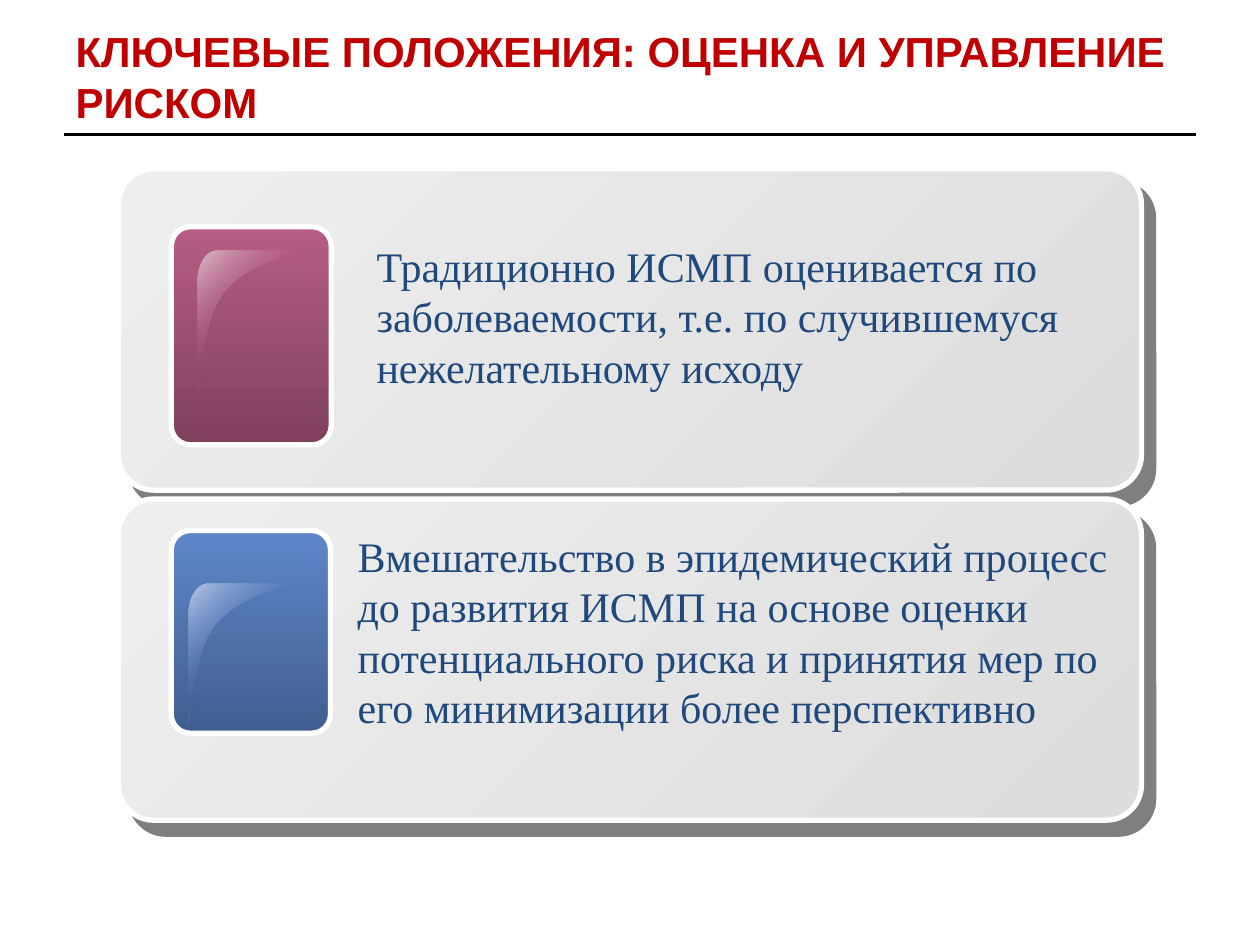
from lxml import etree
from pptx import Presentation
from pptx import util as u
from pptx.dml.color import RGBColor
from pptx.enum import shapes, text
from pptx.oxml import ns

TITLE_RED = RGBColor(0xC0, 0x00, 0x00)
TEXT_NAVY = RGBColor(0x1F, 0x49, 0x7D)
WHITE = RGBColor(0xFF, 0xFF, 0xFF)
BLACK = RGBColor(0x00, 0x00, 0x00)
PANEL_LIGHT = RGBColor(0xEE, 0xEE, 0xEE)
PANEL_DARK = RGBColor(0xDD, 0xDD, 0xDD)
PLUM = RGBColor(0xB7, 0x5D, 0x86)
PLUM_DARK = RGBColor(0x7F, 0x40, 0x5D)
PLUM_GLOSS = RGBColor(0xDC, 0xBE, 0xC9)
BLUE = RGBColor(0x5E, 0x87, 0xCA)
BLUE_DARK = RGBColor(0x42, 0x5E, 0x8F)
BLUE_GLOSS = RGBColor(0xBE, 0xC9, 0xE4)

GLOSS_START = (10.8, 0)
GLOSS_CURVES = [
    [GLOSS_START, (5, 0), (0, 7.9), (0, 16.6)],
    [(0, 81.4), (2.9, 82.1), (1.4, 42.5), (15.1, 24.5)],
    [(15.1, 24.5), (29.5, 5.8), (56.2, 4.3), (55.4, 0)],
]
CURVE_STEPS = 12


def add_color(parent, color, alpha=100):
    node = etree.SubElement(parent, ns.qn("a:srgbClr"), val=str(color))
    if alpha < 100:
        etree.SubElement(node, ns.qn("a:alpha"), val=str(alpha * 1000))


def set_gradient(shape, stops, angle):
    shape.fill.gradient()
    gradient = shape.fill._xPr.find(ns.qn("a:gradFill"))
    for child in list(gradient):
        gradient.remove(child)
    stop_list = etree.SubElement(gradient, ns.qn("a:gsLst"))
    for position, color, alpha in stops:
        stop = etree.SubElement(stop_list, ns.qn("a:gs"), pos=str(position * 1000))
        add_color(stop, color, alpha)
    etree.SubElement(gradient, ns.qn("a:lin"), ang=str(angle * 60000), scaled="0")


def add_card(slide, left, top, width, height, rounding, colors, angle):
    card = slide.shapes.add_shape(
        shapes.MSO_SHAPE.ROUNDED_RECTANGLE,
        u.Pt(left), u.Pt(top), u.Pt(width), u.Pt(height))
    card.adjustments[0] = rounding
    card.shadow.inherit = False
    set_gradient(card, [(0, colors[0], 100), (100, colors[1], 100)], angle)
    card.line.color.rgb = WHITE
    card.line.width = u.Pt(3)
    return card


def add_panel(slide, top):
    panel = add_card(slide, 67.7, top, 584.6, 183.6, 0.11,
                     (PANEL_LIGHT, PANEL_DARK), 45)
    effects = panel._element.spPr.find(ns.qn("a:effectLst"))
    shadow = etree.SubElement(
        effects, ns.qn("a:outerShdw"), blurRad="0", dist=str(u.Pt(10.6)),
        dir=str(49 * 60000), algn="ctr", rotWithShape="0")
    add_color(shadow, BLACK, 50)


def bezier_point(curve, t):
    weights = ((1 - t) ** 3, 3 * t * (1 - t) ** 2, 3 * t ** 2 * (1 - t), t ** 3)
    return tuple(sum(w * p[axis] for w, p in zip(weights, curve)) for axis in (0, 1))


def add_gloss(slide, left, top, base, gloss):
    def place(point):
        return u.Pt(left + point[0]), u.Pt(top + point[1])

    outline = [place(bezier_point(curve, step / CURVE_STEPS))
               for curve in GLOSS_CURVES for step in range(CURVE_STEPS + 1)]
    builder = slide.shapes.build_freeform(*place(GLOSS_START))
    builder.add_line_segments(outline[1:], close=True)
    highlight = builder.convert_to_shape()
    highlight.shadow.inherit = False
    highlight.line.fill.background()
    set_gradient(highlight, [(0, gloss, 100), (50, base, 0), (100, gloss, 100)], 45)


def style_text(paragraph, font_name, color, bold):
    paragraph.alignment = text.PP_ALIGN.LEFT
    for run in paragraph.runs:
        run.font.name = font_name
        run.font.size = u.Pt(24)
        run.font.bold = bold
        run.font.color.rgb = color


def add_statement(slide, left, top, width, height, wording):
    statement = slide.shapes.add_textbox(
        u.Pt(left), u.Pt(top), u.Pt(width), u.Pt(height))
    frame = statement.text_frame
    frame.word_wrap = True
    frame.auto_size = text.MSO_AUTO_SIZE.SHAPE_TO_FIT_TEXT
    frame.paragraphs[0].text = wording
    style_text(frame.paragraphs[0], "Times New Roman", TEXT_NAVY, False)


def add_heading(slide, wording):
    heading = slide.shapes.title
    heading.left, heading.top = u.Pt(36), u.Pt(21.6)
    heading.width, heading.height = u.Pt(648), u.Pt(43.9)
    frame = heading.text_frame
    frame.text = wording
    frame.word_wrap = True
    frame.auto_size = text.MSO_AUTO_SIZE.NONE
    frame.vertical_anchor = text.MSO_ANCHOR.MIDDLE
    style_text(frame.paragraphs[0], "Arial", TITLE_RED, True)


def add_rule(slide):
    rule = slide.shapes.add_connector(
        shapes.MSO_CONNECTOR.STRAIGHT,
        u.Pt(36.7), u.Pt(77), u.Pt(683.3), u.Pt(77))
    rule.line.color.rgb = BLACK
    rule.line.width = u.Pt(1.5)
    etree.SubElement(rule._element.spPr, ns.qn("a:effectLst"))


def main():
    deck = Presentation()
    deck.slide_width, deck.slide_height = u.Pt(720), u.Pt(540)
    slide = deck.slides.add_slide(deck.slide_layouts[5])

    add_rule(slide)
    add_heading(slide, "КЛЮЧЕВЫЕ ПОЛОЖЕНИЯ: ОЦЕНКА И УПРАВЛЕНИЕ РИСКОМ")

    add_panel(slide, 96.5)
    add_statement(slide, 208.1, 133.9, 475.2, 94.3,
                  "Традиционно ИСМП оценивается по заболеваемости, "
                  "т.е. по случившемуся\vнежелательному исходу")
    add_card(slide, 97.9, 129.6, 91.4, 124.6, 0.12, (PLUM, PLUM_DARK), 90)
    add_gloss(slide, 113, 143.3, PLUM, PLUM_GLOSS)

    add_panel(slide, 285.1)
    add_card(slide, 97.9, 303.1, 91, 115.9, 0.12, (BLUE, BLUE_DARK), 90)
    add_gloss(slide, 108, 333.4, BLUE, BLUE_GLOSS)
    add_statement(slide, 197.3, 299.5, 450.7, 123.8,
                  "Вмешательство в эпидемический процесс до развития ИСМП "
                  "на основе оценки потенциального риска и принятия мер "
                  "по его минимизации более перспективно")

    deck.save("out.pptx")


if __name__ == "__main__":
    main()
